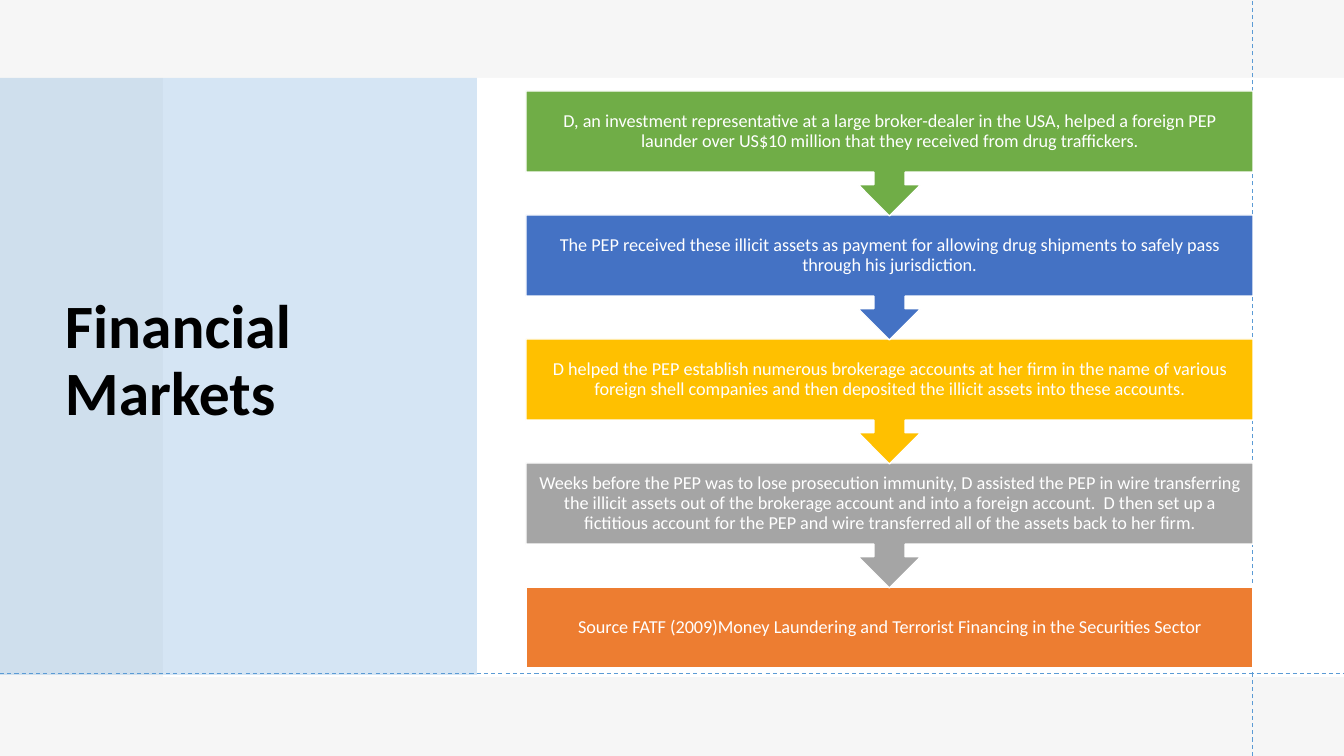
from lxml.etree import SubElement
from pptx import Presentation
from pptx.dml.color import RGBColor
from pptx.enum.dml import MSO_LINE
from pptx.enum.shapes import MSO_CONNECTOR, MSO_SHAPE
from pptx.enum.text import MSO_ANCHOR, PP_ALIGN
from pptx.oxml.ns import qn
from pptx.util import Emu, Pt

EMU_PER_PX = 914400 / 100.8
SLIDE_WIDTH, SLIDE_HEIGHT = 1344, 756

BLACK = RGBColor(0x00, 0x00, 0x00)
WHITE = RGBColor(0xFF, 0xFF, 0xFF)
LIGHT_GRAY = RGBColor(0xE7, 0xE6, 0xE6)
LIGHT_BLUE = RGBColor(0x5B, 0x9B, 0xD5)
GREEN = RGBColor(0x70, 0xAD, 0x47)
BLUE = RGBColor(0x44, 0x72, 0xC4)
GOLD = RGBColor(0xFF, 0xC0, 0x00)
GRAY = RGBColor(0xA5, 0xA5, 0xA5)
ORANGE = RGBColor(0xED, 0x7D, 0x31)

STEPS = [
    (GREEN, "D, an investment representative at a large broker-dealer in the USA, helped a "
            "foreign PEP launder over US$10 million that they received from drug traffickers."),
    (BLUE, "The PEP received these illicit assets as payment for allowing drug shipments to "
           "safely pass through his jurisdiction."),
    (GOLD, "D helped the PEP establish numerous brokerage accounts at her firm in the name of "
           "various foreign shell companies and then deposited the illicit assets into these "
           "accounts."),
    (GRAY, "Weeks before the PEP was to lose prosecution immunity, D assisted the PEP in wire "
           "transferring the illicit assets out of the brokerage account and into a foreign "
           "account.  D then set up a fictitious account for the PEP and wire transferred all "
           "of the assets back to her firm."),
    (ORANGE, "Source FATF (2009)Money Laundering and Terrorist Financing in the Securities "
             "Sector"),
]
STEP_LEFT, STEP_TOP, STEP_WIDTH = 526, 91, 727
STEP_PITCH, BOX_HEIGHT, CALLOUT_HEIGHT = 124, 81, 125


def px(*lengths):
    """Turn pixel lengths into EMU."""
    return [Emu(round(length * EMU_PER_PX)) for length in lengths]


class SlideBuilder:
    """Draws elements on one slide in a shared style."""

    font_name = "Calibri"
    line_spacing = 0.9
    step_inset = 10

    def __init__(self, slide):
        self.slide = slide

    def filled_shape(self, kind, left, top, width, height, color):
        shape = self.slide.shapes.add_shape(kind, *px(left, top, width, height))
        shape.shadow.inherit = False
        shape.fill.solid()
        shape.fill.fore_color.rgb = color
        return shape

    def panel(self, left, top, width, height, color, opacity=100):
        """Add a borderless rectangle; opacity is in percent."""
        shape = self.filled_shape(MSO_SHAPE.RECTANGLE, left, top, width, height, color)
        shape.line.fill.background()
        if opacity < 100:
            color_element = shape._element.spPr.find(qn("a:solidFill"))[0]
            SubElement(color_element, qn("a:alpha"), val=str(opacity * 1000))

    def set_text(self, shape, text, size, color, bold=False, align=PP_ALIGN.LEFT):
        frame = shape.text_frame
        frame.word_wrap = True
        frame.vertical_anchor = MSO_ANCHOR.MIDDLE
        paragraph = frame.paragraphs[0]
        paragraph.text = text
        paragraph.alignment = align
        paragraph.line_spacing = self.line_spacing
        paragraph.font.name = self.font_name
        paragraph.font.size = Pt(size)
        paragraph.font.bold = bold
        paragraph.font.color.rgb = color

    def title(self, text, left, top, width, height):
        box = self.slide.shapes.add_textbox(*px(left, top, width, height))
        self.set_text(box, text, 44, BLACK, bold=True)

    def guide(self, *ends):
        """Add a dashed line; ends are x1, y1, x2, y2."""
        line = self.slide.shapes.add_connector(MSO_CONNECTOR.STRAIGHT, *px(*ends))
        line.line.color.rgb = LIGHT_BLUE
        line.line.width = Pt(0.75)
        line.line.dash_style = MSO_LINE.DASH
        SubElement(line._element.spPr, qn("a:effectLst"))

    def step(self, text, color, top, is_last):
        """Add a process box, with an arrow below it unless it is the last."""
        kind = MSO_SHAPE.RECTANGLE if is_last else MSO_SHAPE.DOWN_ARROW_CALLOUT
        height = BOX_HEIGHT if is_last else CALLOUT_HEIGHT
        shape = self.filled_shape(kind, STEP_LEFT, top, STEP_WIDTH, height, color)
        shape.line.color.rgb = WHITE
        shape.line.width = Pt(1)
        frame = shape.text_frame
        (frame.margin_left, frame.margin_top,
         frame.margin_right, frame.margin_bottom) = px(*[self.step_inset] * 4)
        self.set_text(shape, text, 13, WHITE, align=PP_ALIGN.CENTER)


def main():
    presentation = Presentation()
    presentation.slide_width, presentation.slide_height = px(SLIDE_WIDTH, SLIDE_HEIGHT)
    builder = SlideBuilder(presentation.slides.add_slide(presentation.slide_layouts[6]))

    builder.panel(0, 0, SLIDE_WIDTH, SLIDE_HEIGHT, LIGHT_GRAY, opacity=35)
    builder.panel(163, 78, 1181, 599, WHITE)
    builder.panel(0, 78, 477, 597, LIGHT_BLUE, opacity=25)
    builder.title("Financial Markets", 55, 75, 398, 574)
    builder.guide(1253, SLIDE_HEIGHT, 1253, 0)
    builder.guide(0, 674, SLIDE_WIDTH, 674)

    last = len(STEPS) - 1
    for index, (color, text) in reversed(list(enumerate(STEPS))):
        builder.step(text, color, STEP_TOP + index * STEP_PITCH, index == last)

    presentation.save("out.pptx")


if __name__ == "__main__":
    main()
